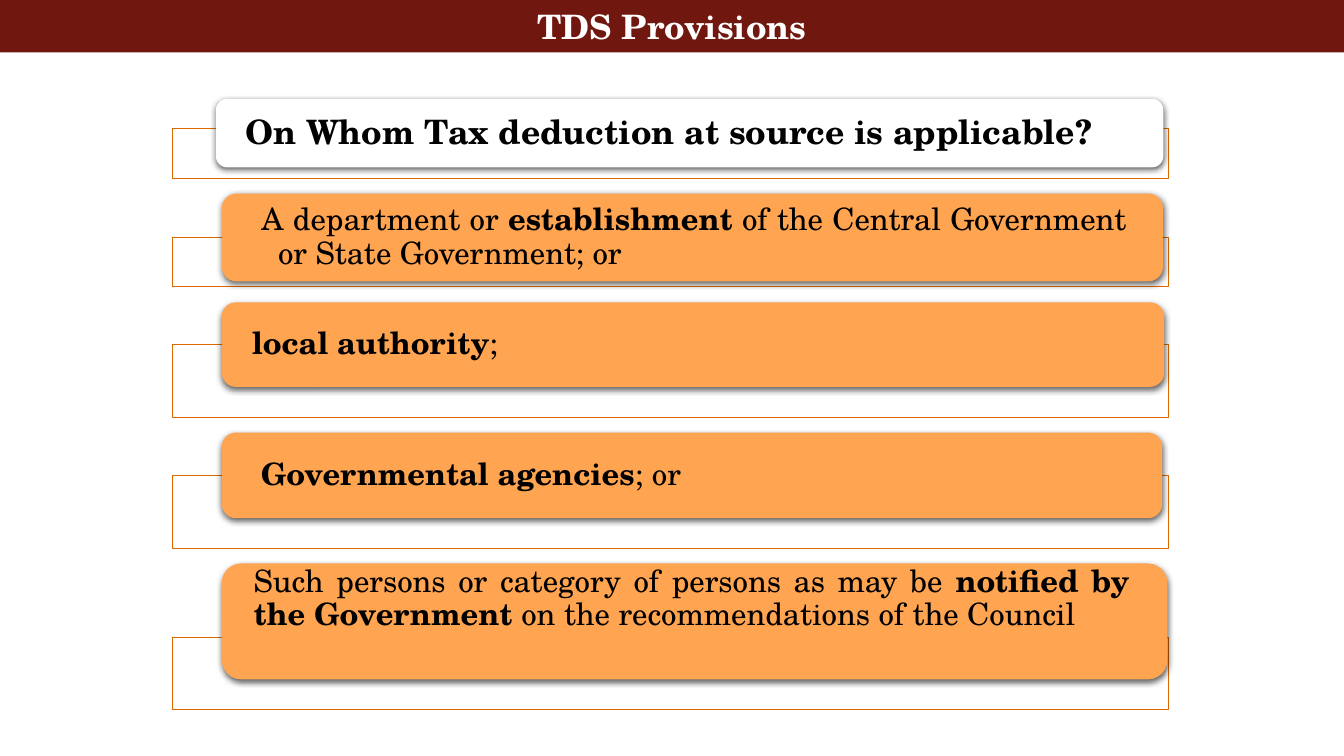
import pptx
import pptx.dml.color
import pptx.enum.shapes
import pptx.enum.text
import pptx.oxml
import pptx.oxml.ns
import pptx.util
from pptx.util import Cm

FONT = "TeX Gyre Schola"
ORANGE = "FFA451"
DRAWING = pptx.oxml.ns.nsdecls("a")
SHAPE = pptx.enum.shapes.MSO_SHAPE
ALIGN = pptx.enum.text.PP_ALIGN
FRAME_LEFT, FRAME_WIDTH = 4.34, 25.1

# Card: left, top, width, height; frame: top, height (cm)
# Text: (words, bold) spans
ROWS = [
    dict(card=(5.44, 2.49, 23.88, 1.73), frame=(3.23, 1.27), fill="FFFFFF",
         spans=[("On Whom Tax deduction at source is applicable?", True)],
         size=24, align=ALIGN.LEFT),
    dict(card=(5.59, 4.88, 23.72, 2.21), frame=(5.99, 1.22),
         spans=[("A department or ", False), ("establishment", True),
                (" of the Central Government or State Government; or", False)],
         margin=0.65, indent=-0.42),
    dict(card=(5.59, 7.62, 23.75, 2.13), frame=(8.69, 1.83),
         spans=[("local authority", True), (";", False)]),
    dict(card=(5.59, 10.9, 23.7, 2.16), frame=(11.99, 1.83),
         spans=[("Governmental agencies", True), ("; or", False)],
         margin=0.22),
    dict(card=(5.59, 14.2, 23.83, 2.92), frame=(16.05, 1.83),
         spans=[("Such persons or category of persons as may be ", False),
                ("notified by the Government ", True),
                ("on the recommendations of the Council", False)],
         bottom=1.14),
]


def color(value):
    return pptx.dml.color.RGBColor.from_string(value)


def paint(box, fill):
    box.fill.solid()
    box.fill.fore_color.rgb = color(fill)


def write(box, spans, size=22, ink="000000", align=ALIGN.JUSTIFY, spacing=0.9,
          insets=(0, 0, 0, 0), margin=0, indent=0):
    """Fill a box with one paragraph of (words, bold) spans."""
    frame = box.text_frame
    frame.word_wrap = True
    frame.auto_size = pptx.enum.text.MSO_AUTO_SIZE.NONE
    frame.vertical_anchor = pptx.enum.text.MSO_ANCHOR.MIDDLE
    (frame.margin_left, frame.margin_top,
     frame.margin_right, frame.margin_bottom) = map(Cm, insets)
    para = frame.paragraphs[0]
    para.alignment = align
    para.line_spacing = spacing
    if margin:
        properties = para._p.get_or_add_pPr()
        properties.set("marL", str(Cm(margin)))
        properties.set("indent", str(Cm(indent)))
    for words, bold in spans:
        span = para.add_run()
        span.text = words
        span.font.name = FONT
        span.font.size = pptx.util.Pt(size)
        span.font.bold = bold
        span.font.color.rgb = color(ink)


def add_frame(shapes, top, height):
    """Thin outlined rectangle behind a card."""
    box = shapes.add_shape(SHAPE.RECTANGLE, Cm(FRAME_LEFT), Cm(top),
                           Cm(FRAME_WIDTH), Cm(height))
    box.shadow.inherit = False
    paint(box, "FFFFFF")
    fill_color = box._element.spPr.find(".//" + pptx.oxml.ns.qn("a:srgbClr"))
    fill_color.append(pptx.oxml.parse_xml(f'<a:alpha {DRAWING} val="90000"/>'))
    box.line.color.rgb = color("DC6900")
    box.line.width = pptx.util.Pt(0.5)


def add_card(shapes, place, fill):
    """Rounded card with a soft shadow below it."""
    box = shapes.add_shape(SHAPE.ROUNDED_RECTANGLE, *map(Cm, place))
    paint(box, fill)
    box.line.fill.background()
    box._element.spPr.append(pptx.oxml.parse_xml(
        f'<a:effectLst {DRAWING}><a:outerShdw blurRad="57150" dist="19050" '
        'dir="5400000" algn="ctr" rotWithShape="0"><a:srgbClr val="000000">'
        '<a:alpha val="63000"/></a:srgbClr></a:outerShdw></a:effectLst>'))
    return box


def add_row(shapes, card, frame, spans, fill=ORANGE, bottom=0, **text_format):
    add_frame(shapes, *frame)
    box = add_card(shapes, card, fill)
    write(box, spans, insets=(0.66, 0, 0.81, bottom), **text_format)


def add_title(page, words, width):
    title = page.shapes.title
    title.left, title.top, title.width, title.height = 0, 0, width, Cm(1.32)
    paint(title, "70180F")
    write(title, [(words, True)], size=24, ink="FFFFFF", align=ALIGN.CENTER,
          spacing=1)


def main():
    deck = pptx.Presentation()
    deck.slide_width, deck.slide_height = Cm(33.87), Cm(19.05)
    page = deck.slides.add_slide(deck.slide_layouts.get_by_name("Title Only"))

    # Title band
    add_title(page, "TDS Provisions", deck.slide_width)

    # Question and its answers
    group = page.shapes.add_group_shape()
    for row in ROWS:
        add_row(group.shapes, **row)

    deck.save("out.pptx")


if __name__ == "__main__":
    main()
